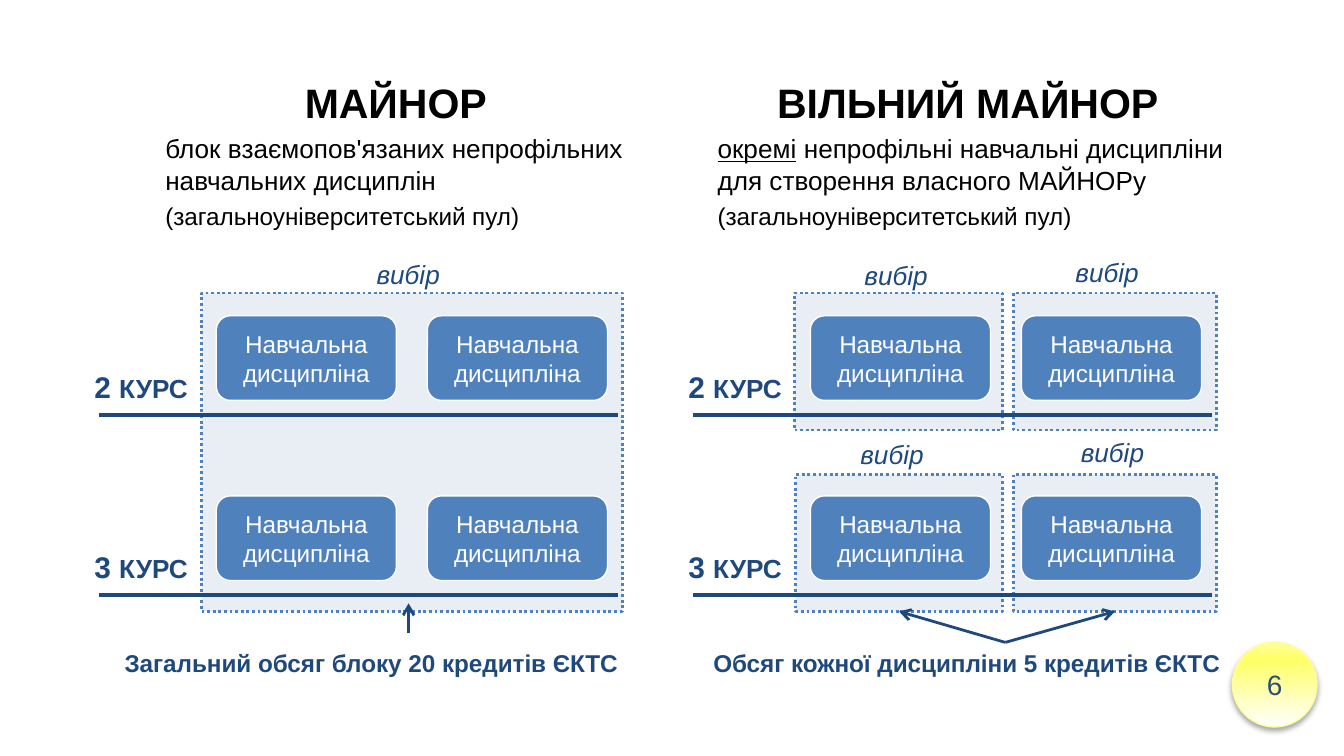
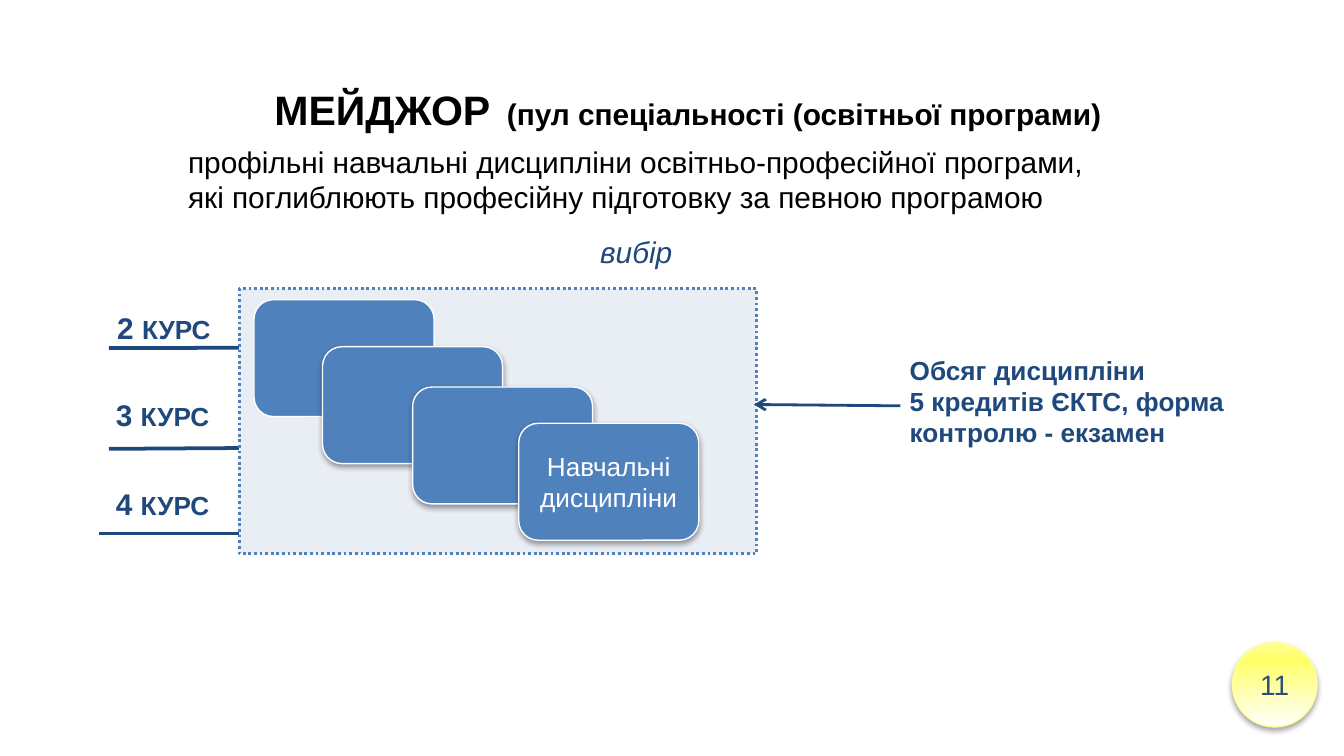
from copy import deepcopy

from lxml import etree
from pptx import Presentation
from pptx.dml.color import RGBColor
from pptx.enum.dml import MSO_LINE
from pptx.enum.shapes import MSO_CONNECTOR, MSO_SHAPE
from pptx.enum.text import MSO_ANCHOR, MSO_AUTO_SIZE, PP_ALIGN
from pptx.oxml.ns import qn
from pptx.util import Pt

PX = 9144
SLIDE_WIDTH = 1000
LEFT, CENTER = PP_ALIGN.LEFT, PP_ALIGN.CENTER
TOP, MIDDLE = MSO_ANCHOR.TOP, MSO_ANCHOR.MIDDLE
NO_FIT = MSO_AUTO_SIZE.NONE
RECT, ROUNDED, OVAL = MSO_SHAPE.RECTANGLE, MSO_SHAPE.ROUNDED_RECTANGLE, MSO_SHAPE.OVAL
STRAIGHT = MSO_CONNECTOR.STRAIGHT
DOTTED = MSO_LINE.ROUND_DOT
BOTTOM_SIDE = 2

BLACK = RGBColor(0x00, 0x00, 0x00)
WHITE = RGBColor(0xFF, 0xFF, 0xFF)
NAVY = RGBColor(0x1F, 0x49, 0x7D)
BLUE = RGBColor(0x4F, 0x81, 0xBD)
PALE = RGBColor(0xE9, 0xED, 0xF4)
NUMBER = RGBColor(0x2D, 0x4E, 0x77)
YELLOW = RGBColor(0xFF, 0xFF, 0x66)
LEMON = RGBColor(0xFF, 0xFF, 0x99)

FONT = "Arial"
CARD_SIZE = (134, 63)
STACK_SIZE = (134, 87)
COURSE_SIZE = (94, 43)
ROW_TOPS = {2: 235, 3: 369}
POOL = "(загальноуніверситетський пул)"
CHOICE = "вибір "


def scaled(*lengths):
    """Turn px lengths into EMU."""
    return [length * PX for length in lengths]


def add_span(para, text, size, color, **formats):
    """Add one formatted run to a paragraph."""
    span = para.add_run()
    span.text = text
    for key, value in {"name": FONT, "size": Pt(size), **formats}.items():
        setattr(span.font, key, value)
    span.font.color.rgb = color


def set_frame(shape, anchor, **formats):
    """Set up the text frame of a shape and return its first paragraph."""
    frame = shape.text_frame
    settings = {"word_wrap": True, "auto_size": NO_FIT, "vertical_anchor": anchor}
    for key, value in {**settings, **formats}.items():
        setattr(frame, key, value)
    return frame.paragraphs[0]


def add_label(page, box, spans, align=CENTER):
    """Place a one-paragraph text box and return it."""
    label = page.shapes.add_textbox(*scaled(*box))
    para = set_frame(label, MIDDLE)
    para.alignment = align
    for text, size, formats in spans:
        add_span(para, text, size, NAVY, **formats)
    return label


def add_box(page, kind, box, fill, line, width, dash=None):
    """Place a preset shape with a solid fill and no shadow."""
    shape = page.shapes.add_shape(kind, *scaled(*box))
    shape.fill.solid()
    shape.fill.fore_color.rgb = fill
    shape.line.color.rgb = line
    shape.line.width = Pt(width)
    if dash:
        shape.line.dash_style = dash
    shape.shadow.inherit = False
    return shape


def add_shadow(shape, opacity, distance):
    """Give a shape a soft shadow that falls straight down."""
    effects = shape._element.spPr.find(qn("a:effectLst"))
    outer = etree.SubElement(effects, qn("a:outerShdw"), blurRad=str(Pt(3.1)),
                             dist=str(Pt(distance)), dir="5400000", rotWithShape="0")
    color = etree.SubElement(outer, qn("a:srgbClr"), val=str(BLACK))
    etree.SubElement(color, qn("a:alpha"), val=str(opacity * 1000))


def add_line(page, start, end, width, arrow=False):
    """Draw a straight line, with an arrowhead at its end if asked."""
    line = page.shapes.add_connector(STRAIGHT, *scaled(*start, *end))
    line.line.color.rgb = NAVY
    line.line.width = Pt(width)
    if arrow:
        etree.SubElement(line.line._ln, qn("a:tailEnd"), type="arrow")
    etree.SubElement(line._element.spPr, qn("a:effectLst"))
    return line


def add_heading(shape, box, title_spans, lines, indent=0):
    """Fill a shape with a centred heading and its explanatory lines."""
    shape.left, shape.top, shape.width, shape.height = scaled(*box)
    para = set_frame(shape, TOP, margin_top=5 * PX, margin_bottom=5 * PX,
                     margin_left=10 * PX, margin_right=10 * PX)
    para.alignment = CENTER
    for text, size in title_spans:
        add_span(para, text, size, BLACK, bold=True)
    for size, spans in lines:
        para = shape.text_frame.add_paragraph()
        para.alignment = LEFT
        para.space_before = Pt(3)
        properties = para._p.get_or_add_pPr()
        properties.set("marL", str(indent * PX))
        properties.set("indent", "0")
        for text, underline in spans:
            if text == "\n":
                para.add_line_break()
            else:
                add_span(para, text, size, BLACK, bold=False, underline=underline)


def add_card(page, box, text="", size=13):
    """Place a blue discipline card."""
    card = add_box(page, ROUNDED, box, BLUE, WHITE, 0.75)
    if text:
        para = set_frame(card, MIDDLE)
        para.alignment = CENTER
        add_span(para, text, size, WHITE)
    return card


def add_choice(page, box, label_box, size=14):
    """Place a dotted frame with the choice label above it."""
    frame = add_box(page, RECT, box, PALE, BLUE, 1.5, DOTTED)
    add_label(page, label_box, [(CHOICE, size, {"italic": True})])
    return frame


def add_course(page, left, top, year):
    """Place the label of a year of study."""
    add_label(page, (left, top, *COURSE_SIZE),
              [(f"{year} ", 16, {"bold": True}), ("КУРС", 14, {"bold": True})])


def add_course_rows(page, left):
    """Place the two years with their cards and base lines."""
    for year, top in ROW_TOPS.items():
        for offset in (87, 244):
            add_card(page, (left + offset, top, *CARD_SIZE), "Навчальна дисципліна")
        add_course(page, left - 16, top + 31, year)
        add_line(page, (left, top + 74), (left + 386, top + 74), 2)


def add_credits(page, box, text):
    """Place the bold note on the amount of credits."""
    add_label(page, box, [(text, 13, {"bold": True})])


def add_badge(page, number):
    """Place the round yellow page number."""
    badge = add_box(page, OVAL, (917, 478, 63, 63), WHITE, LEMON, 0.75)
    fill = badge.fill
    fill.gradient()
    fill.gradient_angle = 90
    stop_list = badge._element.spPr.find(".//" + qn("a:gsLst"))
    stop_list.append(deepcopy(stop_list[0]))
    stops = ((0, WHITE), (0.8, YELLOW), (1, LEMON))
    for stop, (position, color) in zip(fill.gradient_stops, stops):
        stop.position = position
        stop.color.rgb = color
    add_shadow(badge, 35, 1.8)
    para = set_frame(badge, MIDDLE, margin_left=0, margin_right=0)
    para.alignment = CENTER
    add_span(para, str(number), 15, NUMBER)


def build_block_minor(page, left):
    """Build the half for the minor taken as one block."""
    text = "блок взаємопов'язаних непрофільних навчальних дисциплін"
    add_heading(page.shapes.title, (left - 1, 53, 443, 134), [("МАЙНОР", 22)],
                [(14, [(text, False)]), (13, [(POOL, False)])], 40)
    add_choice(page, (left + 76, 218, 313, 237), (left + 142, 187, 181, 34))
    add_course_rows(page, left)
    add_line(page, (left + 230, 471), (left + 230, 449), 1.5, True)
    add_credits(page, (left + 3, 470, 398, 47), "Загальний обсяг блоку 20 кредитів ЄКТС")


def build_free_minor(page, left):
    """Build the half for the minor made of separate disciplines."""
    heading = page.shapes.add_textbox(0, 0, PX, PX)
    rest = " непрофільні навчальні дисципліни для створення власного МАЙНОРу"
    add_heading(heading, (left - 32, 53, 472, 134), [("ВІЛЬНИЙ МАЙНОР", 22)],
                [(14, [("окремі", True), (rest, False)]), (13, [(POOL, False)])], 40)
    choices = (
        (75, 218, 155, 75, 189),
        (238, 218, 151, 232, 187),
        (76, 353, 154, 72, 322),
        (238, 353, 151, 236, 321),
    )
    frames = [
        add_choice(page, (left + x, y, width, 102), (left + label_x, label_y, 157, 31))
        for x, y, width, label_x, label_y in choices
    ]
    add_course_rows(page, left)
    add_credits(page, (left - 8, 470, 422, 47), "Обсяг кожної дисципліни 5 кредитів ЄКТС")
    for frame in frames[2:]:
        arrow = add_line(page, (left + 232, 478), (left + 232, 455), 1.5, True)
        arrow.end_connect(frame, BOTTOM_SIDE)


def build_major(page, left):
    """Build the slide for the major."""
    lines = [("профільні навчальні дисципліни освітньо-професійної програми, ", False),
             ("\n", False),
             ("які поглиблюють професійну підготовку за певною програмою", False)]
    add_heading(page.shapes.title, (left + 56, 44, 764, 135),
                [("МЕЙДЖОР", 22), (" ", 32), ("(пул спеціальності (освітньої програми)", 16)],
                [(16, lines)])
    courses = ((2, 1, 222, 7, 259, 258), (3, 0, 287, 7, 334, 331), (4, 0, 353, 0, 397, 397))
    for year, label_x, label_y, line_x, start_y, end_y in courses:
        add_course(page, left + label_x, label_y, year)
        add_line(page, (left + line_x, start_y), (left + 489, end_y), 2)
    add_choice(page, (left + 104, 215, 385, 197), (left + 312, 172, 181, 31), 16)
    add_card(page, (left + 115, 223, *STACK_SIZE))
    stack = ((166, 258, ""), (233, 288, ""), (312, 315, "Навчальні дисципліни"))
    for x, y, text in stack:
        add_shadow(add_card(page, (left + x, y, *STACK_SIZE), text, 14), 38, 1.6)
    bold = {"bold": True}
    note = add_label(page, (left + 593, 263, 261, 71),
                     [("Обсяг дисципліни", 14, bold)], LEFT)
    add_span(note.text_frame.add_paragraph(),
             "5 кредитів ЄКТС, форма контролю - екзамен", 14, NAVY, **bold)
    add_line(page, (left + 596, 302), (left + 487, 301), 1.5, True)


def main():
    """Build the deck and save it."""
    deck = Presentation()
    deck.slide_width = SLIDE_WIDTH * PX
    deck.slide_height = deck.slide_width * 9 // 16
    title_only = deck.slide_layouts[5]
    minors = deck.slides.add_slide(title_only)
    build_block_minor(minors, 74)
    build_free_minor(minors, 516)
    add_badge(minors, 6)
    major = deck.slides.add_slide(title_only)
    build_major(major, 74)
    add_badge(major, 11)
    deck.save("out.pptx")


if __name__ == "__main__":
    main()
